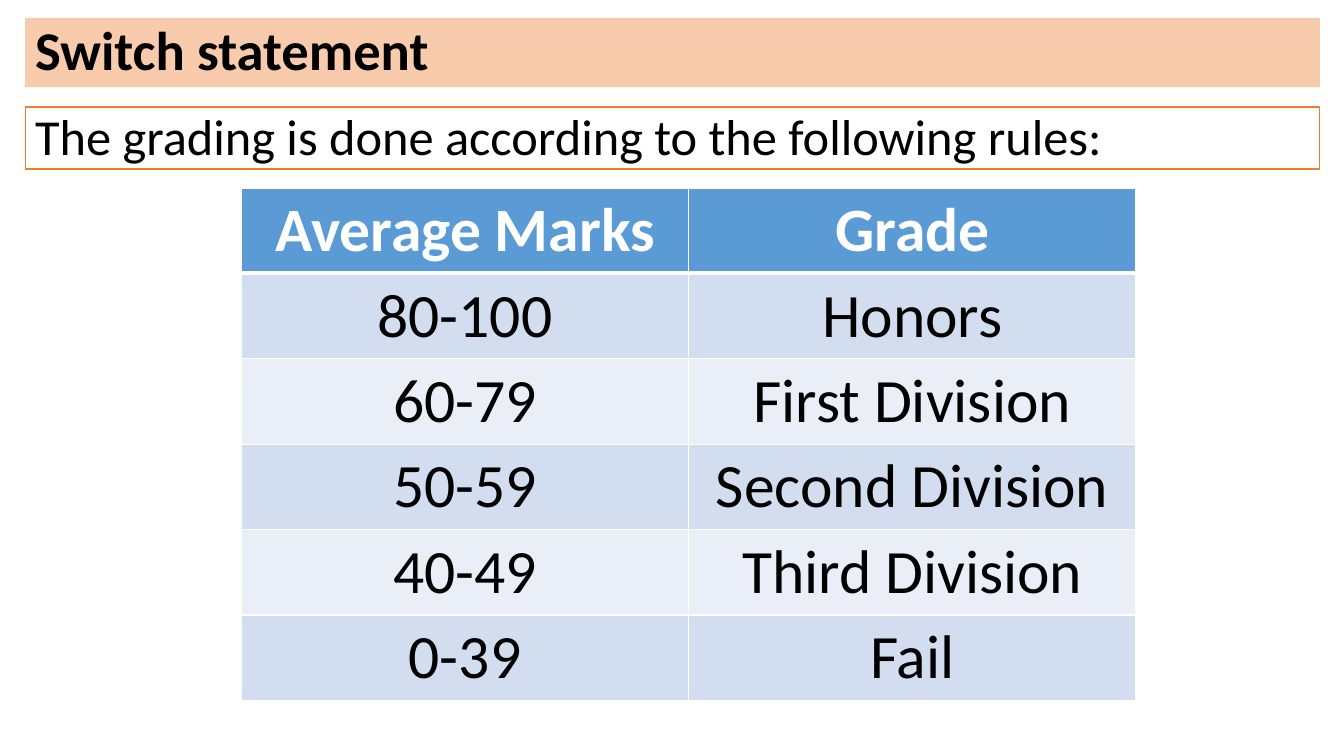
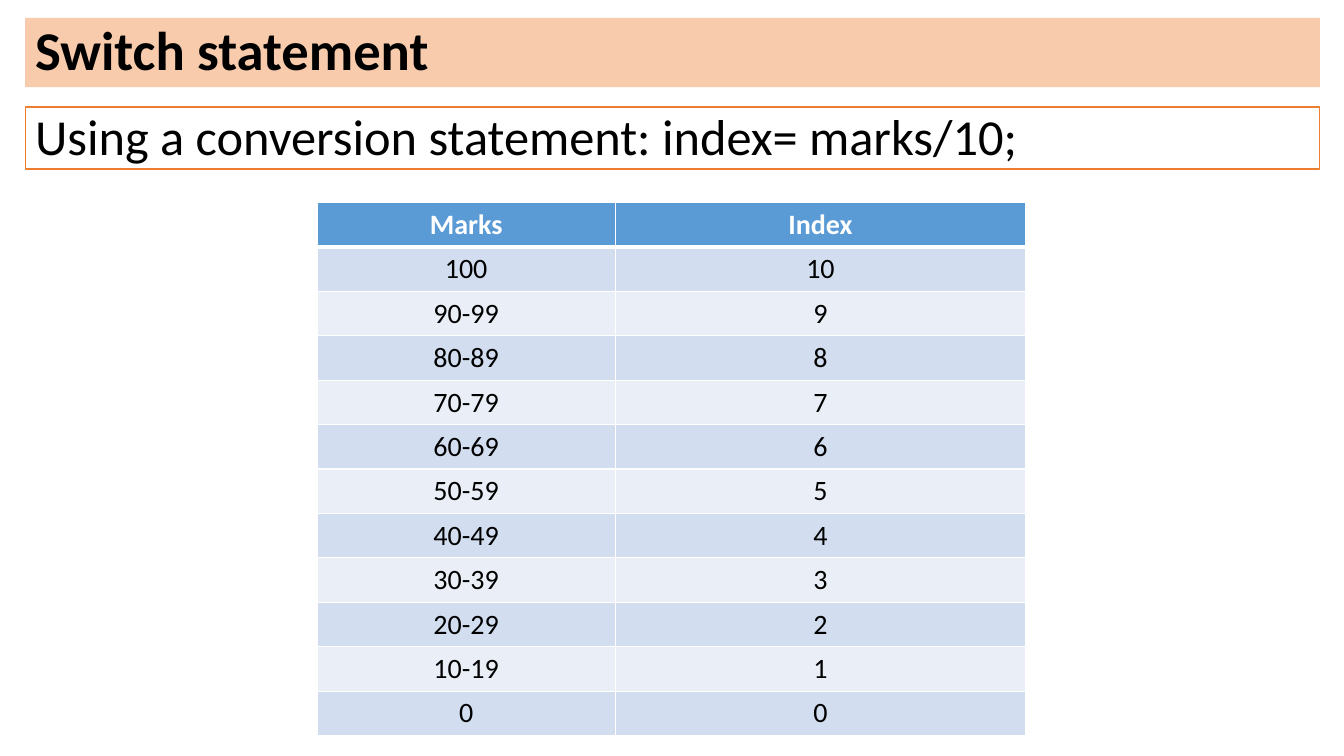
from lxml import etree
from pptx import Presentation
from pptx import util as u
from pptx.dml.color import RGBColor
from pptx.enum import shapes, text
from pptx.oxml import ns

PX = 9525  # EMU per px, 96 px to the inch
FONT = "Calibri"
BLACK, WHITE = "000000", "FFFFFF"
ORANGE, PEACH = "ED7D31", "F8CBAD"
HEADER_BLUE = "5B9BD5"
ROW_BLUES = ("D2DEEF", "EAEFF7")
MARGIN, CONTENT_WIDTH = 24, 1233


def px(length):
    return u.Emu(length * PX)


def rgb(colour):
    return RGBColor.from_string(colour)


def style_paragraph(paragraph, size, colour=BLACK, bold=False, align=text.PP_ALIGN.LEFT):
    paragraph.alignment = align
    paragraph.font.name = FONT
    paragraph.font.size = u.Pt(size)
    paragraph.font.bold = bold
    paragraph.font.color.rgb = rgb(colour)


def add_border(cell, edge, points):
    """Draw a white line on one edge: L, R, T or B, called in that order."""
    properties = cell._tc.get_or_add_tcPr()
    line = etree.SubElement(properties, ns.qn(f"a:ln{edge}"), w=str(u.Pt(points)))
    fill = etree.SubElement(line, ns.qn("a:solidFill"))
    etree.SubElement(fill, ns.qn("a:srgbClr"), val=WHITE)


class Deck:
    def __init__(self):
        self.presentation = Presentation()
        self.presentation.slide_width = px(1280)
        self.presentation.slide_height = px(720)
        self.slide = None

    def add_slide(self, title, statement):
        self.slide = self.presentation.slides.add_slide(self.presentation.slide_layouts[6])
        heading = self.bar(title, 17, 66, PEACH, anchor=text.MSO_ANCHOR.BOTTOM)
        style_paragraph(heading, 39, bold=True)
        intro = self.bar(statement, 102, 59, WHITE, outline=ORANGE)
        style_paragraph(intro, 36, align=text.PP_ALIGN.JUSTIFY)

    def bar(self, wording, top, height, fill, outline=None, anchor=text.MSO_ANCHOR.TOP):
        """Add a full-width band and return its paragraph."""
        band = self.slide.shapes.add_shape(
            shapes.MSO_SHAPE.RECTANGLE, px(MARGIN), px(top), px(CONTENT_WIDTH), px(height))
        band.shadow.inherit = False
        band.fill.solid()
        band.fill.fore_color.rgb = rgb(fill)
        if outline:
            band.line.color.rgb = rgb(outline)
            band.line.width = u.Pt(1)
        else:
            band.line.fill.background()
        frame = band.text_frame
        frame.word_wrap = True
        frame.vertical_anchor = anchor
        paragraph = frame.paragraphs[0]
        paragraph.text = wording
        paragraph.line_spacing = 0.9
        return paragraph

    def table(self, rows, left, top, widths, row_height, size):
        grid = self.slide.shapes.add_table(
            len(rows), len(widths), px(left), px(top),
            px(sum(widths)), px(row_height * len(rows))).table
        for column, width in zip(grid.columns, widths):
            column.width = px(width)
        for index, values in enumerate(rows):
            grid.rows[index].height = px(row_height)
            for cell, value in zip(grid.rows[index].cells, values):
                self.fill_cell(cell, value, index, size)

    def fill_cell(self, cell, value, row, size):
        is_header = row == 0
        add_border(cell, "L", 1)
        add_border(cell, "R", 1)
        if is_header:
            add_border(cell, "T", 1)
        add_border(cell, "B", 3 if is_header else 1)
        cell.fill.solid()
        cell.fill.fore_color.rgb = rgb(HEADER_BLUE if is_header else ROW_BLUES[(row - 1) % 2])
        cell.text = value
        style_paragraph(cell.text_frame.paragraphs[0], size, WHITE if is_header else BLACK,
                        is_header, text.PP_ALIGN.CENTER)


def main():
    deck = Deck()
    title = "Switch statement"

    deck.add_slide(title, "The grading is done according to the following rules:")
    grades = [
        ("Average Marks", "Grade"),
        ("80-100", "Honors"),
        ("60-79", "First Division"),
        ("50-59", "Second Division"),
        ("40-49", "Third Division"),
        ("0-39", "Fail"),
    ]
    deck.table(grades, 230, 179, (426, 426), 81, 44)

    deck.add_slide(title, "Using a conversion statement: index= marks/10;")
    tens = [(f"{10 * index}-{10 * index + 9}", str(index)) for index in range(9, 0, -1)]
    indexes = [("Marks", "Index"), ("100", "10"), *tens, ("0", "0")]
    deck.table(indexes, 302, 193, (284, 391), 42, 20)

    deck.presentation.save("out.pptx")


if __name__ == "__main__":
    main()
